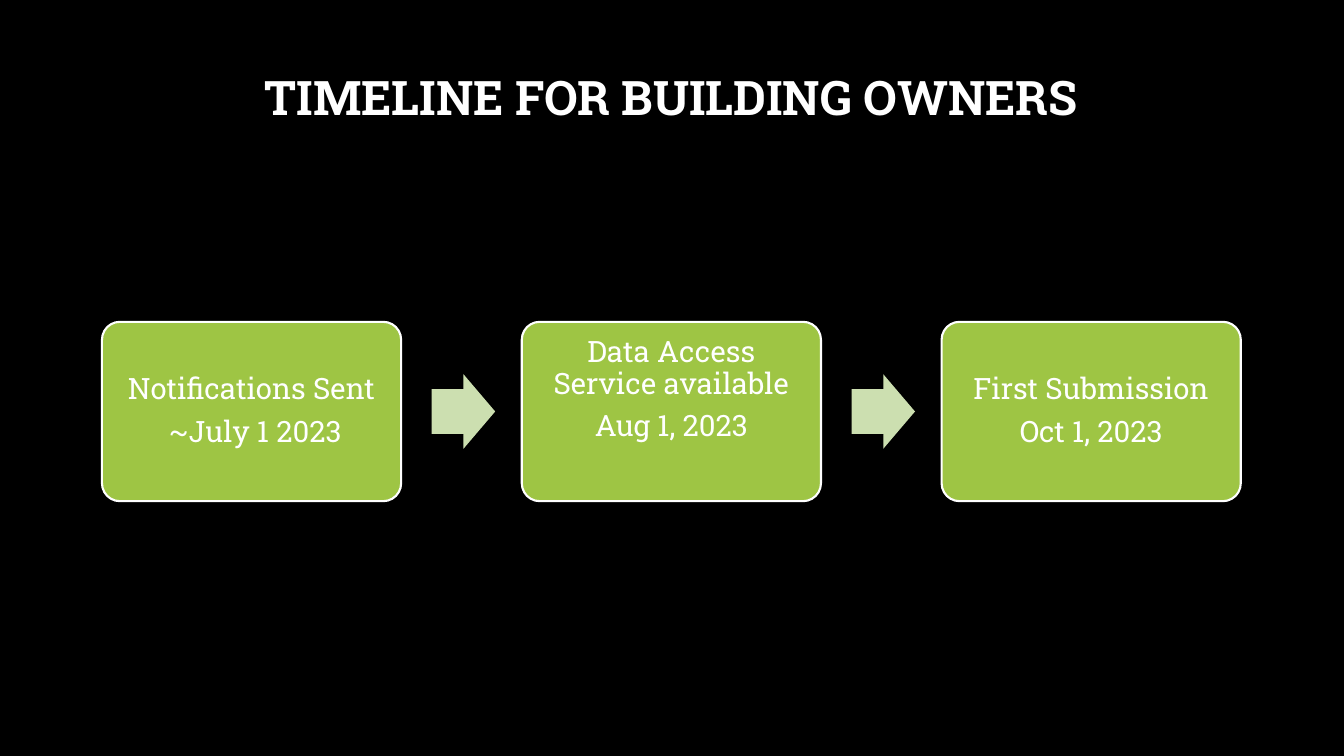
from pptx import Presentation
from pptx.dml.color import RGBColor
from pptx.enum.shapes import MSO_SHAPE as SHAPE
from pptx.enum.text import MSO_ANCHOR as ANCHOR, PP_ALIGN as ALIGN
from pptx.util import Cm, Pt

BLACK = RGBColor(0x00, 0x00, 0x00)
WHITE = RGBColor(0xFF, 0xFF, 0xFF)
GREEN = RGBColor(0x9E, 0xC5, 0x44)
PALE_GREEN = RGBColor(0xCC, 0xDF, 0xB0)

STEPS = [
    (["Notifications Sent", " ~July 1 2023"], 0),
    (["Data Access Service available", "Aug 1, 2023"], 1.07),
    (["First Submission", "Oct 1, 2023"], 0),
]
LEFT, PITCH, MIDDLE = 2.57, 10.58, 10.37
BOX_W, BOX_H = 7.54, 4.52
ARROW_W, ARROW_H, ARROW_OFFSET = 1.6, 1.88, 8.31
INSET = 0.38


class TimelineSlide:
    """Holds the text style and the slide, and draws each kind of element."""

    font = "Roboto Slab"

    def __init__(self, prs):
        """Add a title-only slide with a black background."""
        self.s = prs.slides.add_slide(prs.slide_layouts[5])
        fill = self.s.background.fill
        fill.solid()
        fill.fore_color.rgb = BLACK

    def add_text(self, tf, lines, size, bold=False, after=0):
        """Put centred white paragraphs into a text frame."""
        tf.word_wrap = True
        tf.vertical_anchor = ANCHOR.MIDDLE
        for i, line in enumerate(lines):
            p = tf.add_paragraph() if i else tf.paragraphs[0]
            p.alignment = ALIGN.CENTER
            p.line_spacing = 0.9
            p.space_before, p.space_after = Pt(0), Pt(after)
            r = p.add_run()
            r.text = line
            r.font.name, r.font.size, r.font.bold = self.font, Pt(size), bold
            r.font.color.rgb = WHITE

    def title(self, text):
        """Place and format the title placeholder."""
        sp = self.s.shapes.title
        sp.left, sp.top, sp.width, sp.height = Cm(2.54), Cm(0.69), Cm(28.75), Cm(3.68)
        self.add_text(sp.text_frame, [text], 34, bold=True)

    def shape(self, kind, x, w, h, color, adjustments):
        """Add a filled shape centred on the timeline's axis."""
        sp = self.s.shapes.add_shape(kind, Cm(x), Cm(MIDDLE - h / 2), Cm(w), Cm(h))
        sp.shadow.inherit = False
        sp.fill.solid()
        sp.fill.fore_color.rgb = color
        for i, value in enumerate(adjustments):
            sp.adjustments[i] = value
        return sp

    def step(self, x, lines, lift):
        """Add a rounded step box, its text raised by extra bottom inset."""
        sp = self.shape(SHAPE.ROUNDED_RECTANGLE, x, BOX_W, BOX_H, GREEN, [0.1])
        sp.line.color.rgb = WHITE
        sp.line.width = Pt(1.5)
        tf = sp.text_frame
        tf.margin_left = tf.margin_right = tf.margin_top = Cm(INSET)
        tf.margin_bottom = Cm(INSET + lift)
        self.add_text(tf, lines, 21, after=7.35)

    def arrow(self, x):
        """Add a block arrow leading to the next step."""
        sp = self.shape(SHAPE.RIGHT_ARROW, x, ARROW_W, ARROW_H, PALE_GREEN, [0.6, 0.5])
        sp.line.fill.background()


def main():
    """Build the timeline slide and save it."""
    prs = Presentation()
    prs.slide_width, prs.slide_height = Cm(33.87), Cm(19.05)
    slide = TimelineSlide(prs)
    slide.title("TIMELINE FOR BUILDING OWNERS")
    for i, (lines, lift) in enumerate(STEPS):
        x = LEFT + i * PITCH
        slide.step(x, lines, lift)
        if i < len(STEPS) - 1:
            slide.arrow(x + ARROW_OFFSET)
    prs.save("out.pptx")


if __name__ == "__main__":
    main()
